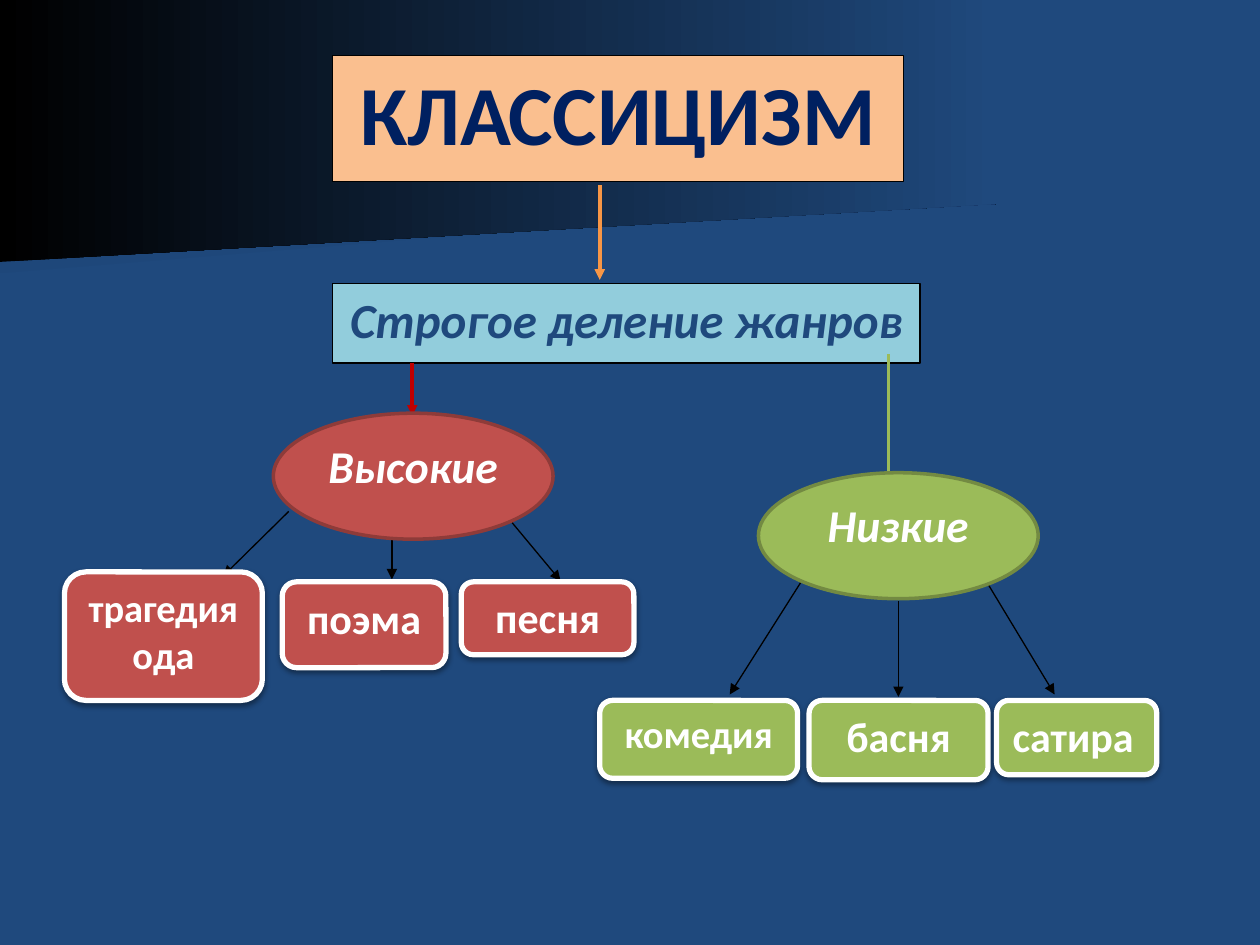
"""Build a slide that shows the division of genres in Classicism."""
from lxml import etree
from pptx import Presentation
from pptx.dml.color import RGBColor
from pptx.enum.shapes import MSO_CONNECTOR, MSO_SHAPE
from pptx.enum.text import MSO_ANCHOR, PP_ALIGN
from pptx.oxml.ns import qn
from pptx.util import Cm, Pt

RECT, OVAL, ROUND = MSO_SHAPE.RECTANGLE, MSO_SHAPE.OVAL, MSO_SHAPE.ROUNDED_RECTANGLE
STRAIGHT = MSO_CONNECTOR.STRAIGHT
LEFT, CENTER, TOP = PP_ALIGN.LEFT, PP_ALIGN.CENTER, MSO_ANCHOR.TOP

BLACK = RGBColor(0x00, 0x00, 0x00)
WHITE = RGBColor(0xFF, 0xFF, 0xFF)
BLUE = RGBColor(0x1F, 0x49, 0x7D)
BAND_BLUE = RGBColor(0x1E, 0x47, 0x7A)
NAVY = RGBColor(0x00, 0x20, 0x60)
PEACH = RGBColor(0xFA, 0xBF, 0x8F)
SKY = RGBColor(0x92, 0xCD, 0xDC)
ORANGE = RGBColor(0xF7, 0x96, 0x46)
DARK_RED = RGBColor(0xC0, 0x00, 0x00)
RED = RGBColor(0xC0, 0x50, 0x4D)
RED_EDGE = RGBColor(0x8E, 0x3B, 0x39)
GREEN = RGBColor(0x9B, 0xBB, 0x59)
GREEN_EDGE = RGBColor(0x73, 0x8A, 0x42)

BANDS = [
    (BAND_BLUE, [(19.76, 3.89), (0, 5.51), (0, 2.57), (19.79, 2.57), (19.76, 3.25)]),
    (BLACK, [(20.12, 4.11), (0, 5.28), (0, 0), (20.12, 0)]),
]
HEADINGS = [
    ("КЛАССИЦИЗМ", (6.71, 1.12, 11.51, 2.54), PEACH,
     {"size": Pt(48), "bold": True}, NAVY),
    ("Строгое деление жанров", (6.71, 5.72, 11.84, 1.6), SKY,
     {"size": Pt(28), "bold": True, "italic": True}, BLUE),
]
MAIN_ARROWS = [
    ((12.09, 3.73), (12.09, 5.64), ORANGE),
    ((8.31, 7.32), (8.31, 8.38), DARK_RED),
    ((17.91, 7.14), (17.91, 9.75), GREEN),
]
FAMILIES = [
    {
        "name": "Высокие", "at": (5.51, 8.33), "fill": RED, "edge": RED_EDGE,
        "arrows": [((5.82, 10.31), (4.5, 11.61)), ((7.9, 10.72), (7.9, 11.68)),
                   ((10.31, 10.52), (11.3, 11.71))],
        "genres": [("трагедия\nода", (1.3, 11.53, 3.99, 2.59), 22, CENTER),
                   ("поэма", (5.69, 11.73, 3.3, 1.73), 24, CENTER),
                   ("песня", (9.3, 11.73, 3.48, 1.47), 24, CENTER)],
    },
    {
        "name": "Низкие", "at": (15.29, 9.53), "fill": GREEN, "edge": GREEN_EDGE,
        "arrows": [((16.15, 11.73), (14.71, 14)), ((18.11, 12.12), (18.11, 14.05)),
                   ((19.89, 11.73), (21.26, 14))],
        "genres": [("комедия", (12.09, 14.12, 3.99, 1.57), 22, CENTER),
                   ("басня", (16.31, 14.12, 3.61, 1.6), 24, CENTER),
                   ("сатира", (20.09, 14.12, 3.23, 1.5), 24, LEFT)],
    },
]
OVAL_SIZE = (5.64, 2.54)


def add_band(slide, color, points):
    pts = [(Cm(x), Cm(y)) for x, y in points]
    builder = slide.shapes.build_freeform(*pts[0])
    builder.add_line_segments(pts[1:], close=True)
    sp = builder.convert_to_shape()
    sp.shadow.inherit = False
    sp.line.fill.background()
    sp.fill.gradient()
    sp.fill.gradient_angle = 0
    for stop, rgb in zip(sp.fill.gradient_stops, (color, BLUE)):
        stop.color.rgb = rgb


def add_box(slide, kind, text, at, fill, edge, width, font, color=WHITE, align=CENTER):
    sp = slide.shapes.add_shape(kind, *map(Cm, at))
    sp.shadow.inherit = False
    sp.fill.solid()
    sp.fill.fore_color.rgb = fill
    sp.line.color.rgb = edge
    sp.line.width = Pt(width)
    tf = sp.text_frame
    tf.word_wrap = True
    tf.vertical_anchor = TOP
    tf.text = text
    for p in tf.paragraphs:
        p.alignment = align
        for r in p.runs:
            for key, value in {"name": "Calibri", **font}.items():
                setattr(r.font, key, value)
            r.font.color.rgb = color
    return sp


def add_soft_shadow(sp):
    effects = sp._element.spPr.find(qn("a:effectLst"))
    shadow = etree.SubElement(effects, qn("a:outerShdw"), blurRad="40000",
                              dist="20000", dir="5400000", rotWithShape="0")
    rgb = etree.SubElement(shadow, qn("a:srgbClr"), val=str(BLACK))
    etree.SubElement(rgb, qn("a:alpha"), val="38000")


def add_arrow(slide, start, end, color=BLACK, width=0.75):
    line = slide.shapes.add_connector(STRAIGHT, *map(Cm, start + end))
    line.line.color.rgb = color
    line.line.width = Pt(width)
    etree.SubElement(line.line._get_or_add_ln(), qn("a:tailEnd"), type="triangle")
    etree.SubElement(line._element.spPr, qn("a:effectLst"))


def main():
    prs = Presentation()
    prs.slide_width, prs.slide_height = Cm(25.4), Cm(19.05)
    slide = prs.slides.add_slide(prs.slide_layouts[6])
    slide.background.fill.solid()
    slide.background.fill.fore_color.rgb = BLUE

    for color, points in BANDS:
        add_band(slide, color, points)
    for text, at, fill, font, color in HEADINGS:
        add_box(slide, RECT, text, at, fill, BLACK, 0.75, font, color)
    for start, end, color in MAIN_ARROWS:
        add_arrow(slide, start, end, color, 2)
    for family in FAMILIES:
        for start, end in family["arrows"]:
            add_arrow(slide, start, end)
        add_box(slide, OVAL, family["name"], family["at"] + OVAL_SIZE, family["fill"],
                family["edge"], 2, {"size": Pt(26), "bold": True, "italic": True})
        for text, at, size, align in family["genres"]:
            sp = add_box(slide, ROUND, text, at, family["fill"], WHITE, 3,
                         {"size": Pt(size), "bold": True}, align=align)
            add_soft_shadow(sp)
    prs.save("out.pptx")


if __name__ == "__main__":
    main()
